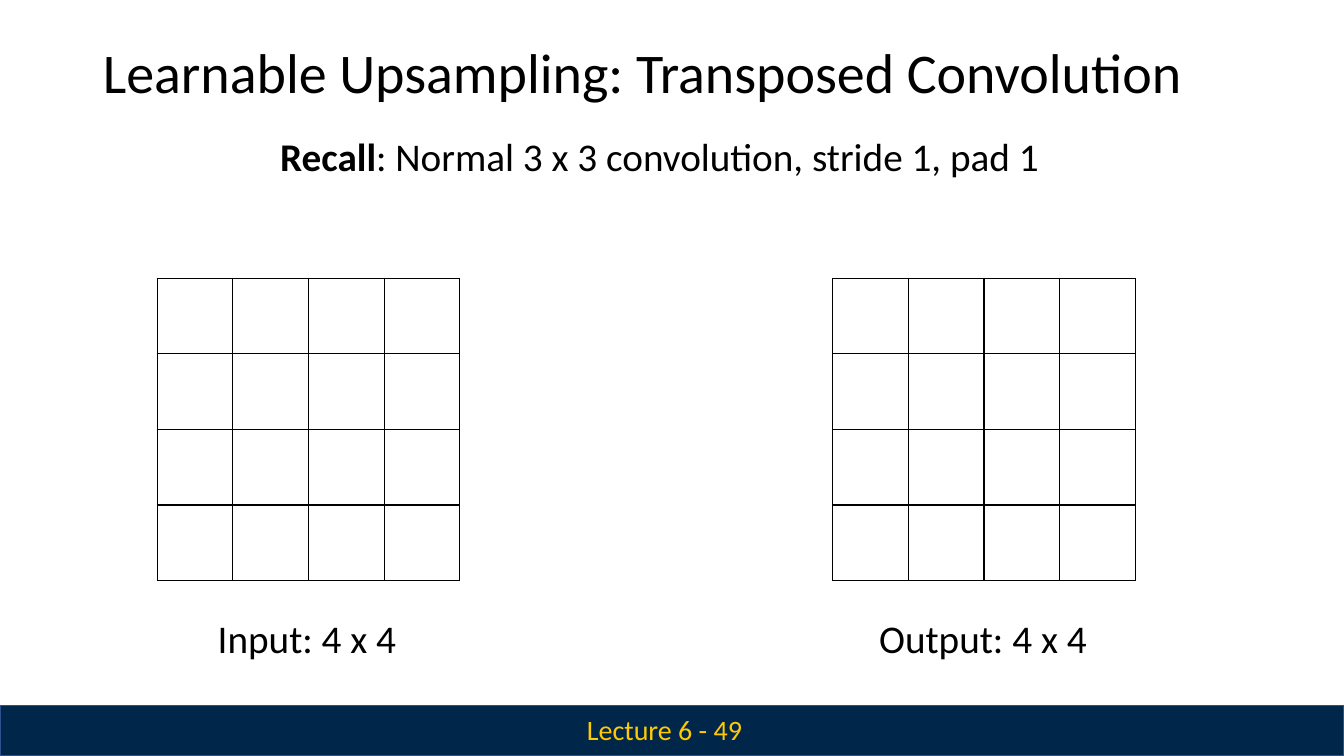
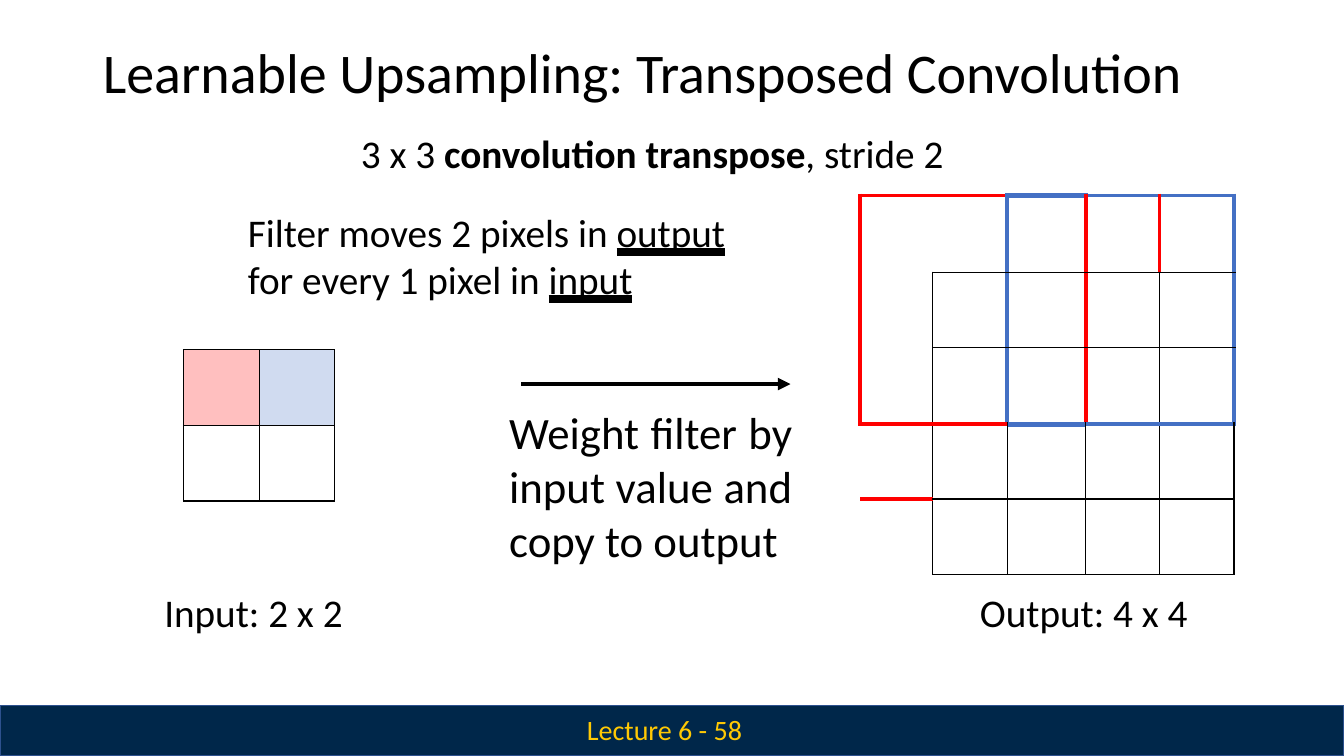
from lxml import etree
from pptx import Presentation
from pptx import util as u
from pptx.dml.color import RGBColor
from pptx.enum import shapes, text
from pptx.oxml import ns

HUES = {"ink": "000000", "navy": "00274A", "edge": "2D518E",
        "gold": "FFC904", "red": "FF0000", "blue": "4470C4"}
PLAIN = "{2D5ABB26-0587-4C30-8999-92F81FD0307C}"
TITLE = "Learnable Upsampling: Transposed Convolution"
CELL = 0.75


def hue(name):
    return RGBColor.from_string(HUES[name])


def child(node, tag, **attrs):
    return etree.SubElement(node, ns.qn("a:" + tag), attrs)


def write(frame, runs, size=28, color="ink", align=text.PP_ALIGN.LEFT):
    frame.word_wrap = True
    frame.auto_size = text.MSO_AUTO_SIZE.NONE
    frame.vertical_anchor = text.MSO_ANCHOR.TOP
    frame.margin_left = frame.margin_right = 0
    frame.margin_top = frame.margin_bottom = 0
    para = frame.paragraphs[0]
    para.alignment = align
    for words, style in runs:
        run = para.add_run()
        run.text = words
        font = run.font
        font.name = "Calibri"
        font.size = u.Pt(size)
        font.color.rgb = hue(color)
        font.bold = style == "bold"
        if style == "under":
            font.underline = text.MSO_UNDERLINE.HEAVY_LINE


def rim(top, left, rows, cols, color, width):
    edges = {}
    for col in range(left, left + cols):
        for row in (top, top + rows):
            edges["h", row, col] = (color, width)
    for row in range(top, top + rows):
        for col in (left, left + cols):
            edges["v", row, col] = (color, width)
    return edges


def mesh(top, left, rows, cols):
    edges = {}
    for row in range(top, top + rows):
        for col in range(left, left + cols):
            edges.update(rim(row, col, 1, 1, "ink", 1))
    return edges


class Deck:
    def __init__(self):
        self.prs = Presentation()
        self.prs.slide_width = u.Inches(13.33)
        self.prs.slide_height = u.Inches(7.5)

    def start(self, number):
        self.slide = self.prs.slides.add_slide(self.prs.slide_layouts[5])
        band = self.slide.shapes.add_shape(
            shapes.MSO_SHAPE.RECTANGLE, 0, u.Inches(7), u.Inches(13.33), u.Inches(0.5))
        band.shadow.inherit = False
        band.fill.solid()
        band.fill.fore_color.rgb = hue("navy")
        band.line.color.rgb = hue("edge")
        band.line.width = u.Pt(1)
        title = self.slide.shapes.title
        title.left, title.top = u.Inches(1.02), u.Inches(0.37)
        title.width, title.height = u.Inches(11.84), u.Inches(0.69)
        write(title.text_frame, [(TITLE, "")], size=40)
        self.label(5.82, 7.07, 1.75, (f"Lecture 6 - {number}", ""),
                   high=0.34, size=20, color="gold")

    def label(self, left, top, wide, *runs, high=0.49, **style):
        box = self.slide.shapes.add_textbox(
            u.Inches(left), u.Inches(top), u.Inches(wide), u.Inches(high))
        write(box.text_frame, runs, **style)

    def grid(self, left, top, cols, rows, edges, tints=None):
        table = self.slide.shapes.add_table(
            len(rows), len(cols), u.Inches(left), u.Inches(top),
            u.Inches(sum(cols)), u.Inches(sum(rows))).table
        table.first_row = table.horz_banding = False
        table._tbl.tblPr.find(ns.qn("a:tableStyleId")).text = PLAIN
        for col, wide in zip(table.columns, cols):
            col.width = u.Inches(wide)
        for row, high in zip(table.rows, rows):
            row.height = u.Inches(high)
        for row in range(len(rows)):
            for col in range(len(cols)):
                cell = table.cell(row, col)
                self.border(cell, row, col, edges)
                self.tint(cell, (tints or {}).get((row, col)))

    def border(self, cell, row, col, edges):
        props = cell._tc.get_or_add_tcPr()
        sides = {"lnL": ("v", row, col), "lnR": ("v", row, col + 1),
                 "lnT": ("h", row, col), "lnB": ("h", row + 1, col)}
        for tag, key in sides.items():
            if key in edges:
                color, width = edges[key]
                line = child(props, tag, w=str(u.Pt(width)))
                child(child(line, "solidFill"), "srgbClr", val=HUES[color])

    def tint(self, cell, color):
        if color is None:
            cell.fill.background()
            return
        cell.fill.solid()
        cell.fill.fore_color.rgb = hue(color)
        paint = cell._tc.tcPr.find(".//" + ns.qn("a:solidFill") + "[last()]")
        for paint in cell._tc.tcPr.findall(ns.qn("a:solidFill")):
            child(paint[0], "alpha", val="25000")

    def arrow(self, left, right, top):
        line = self.slide.shapes.add_connector(
            shapes.MSO_CONNECTOR.STRAIGHT, u.Inches(left), u.Inches(top),
            u.Inches(right), u.Inches(top))
        line.line.color.rgb = hue("ink")
        line.line.width = u.Pt(3)
        child(line.line._get_or_add_ln(), "tailEnd", type="triangle")
        child(line._element.spPr, "effectLst")


def recall(deck):
    deck.start(49)
    for left in (1.56, 8.26):
        deck.grid(left, 2.76, [CELL] * 4, [CELL] * 4, mesh(0, 0, 4, 4))
    deck.label(2.78, 1.31, 7.57, ("Recall", "bold"),
               (": Normal 3 x 3 convolution, stride 1, pad 1", ""))
    deck.label(2.16, 6.09, 1.9, ("Input: 4 x 4", ""))
    deck.label(8.72, 6.09, 2.2, ("Output: 4 x 4", ""))


def transpose(deck):
    deck.start(58)
    edges = {**mesh(1, 1, 4, 4),
             **rim(0, 0, 3, 3, "red", 3),
             **rim(0, 2, 3, 3, "blue", 3)}
    edges["h", 0, 2] = edges["h", 3, 2] = ("blue", 4.5)
    deck.grid(8.53, 1.94, [0.72, 0.74, 0.78, 0.73, 0.74],
              [0.76, 0.75, 0.76, 0.74, 0.75], edges)
    deck.grid(1.82, 3.47, [CELL] * 2, [CELL] * 2, mesh(0, 0, 2, 2),
              {(0, 0): "red", (0, 1): "blue"})
    deck.arrow(5.17, 7.84, 3.81)
    deck.label(3.58, 1.28, 5.9, ("3 x 3 ", ""),
               ("convolution transpose", "bold"), (", stride 2", ""))
    deck.label(2.46, 2.07, 4.9, ("Filter moves 2 pixels in ", ""),
               ("output", "under"), (" for every 1 pixel in ", ""),
               ("input", "under"), high=0.96)
    deck.label(5.05, 4.02, 2.81, ("Weight filter by input value and copy to output", ""),
               high=1.63, size=32, align=text.PP_ALIGN.JUSTIFY)
    deck.label(1.63, 5.84, 1.9, ("Input: 2 x 2", ""))
    deck.label(9.72, 5.84, 2.2, ("Output: 4 x 4", ""))


def main():
    deck = Deck()
    recall(deck)
    transpose(deck)
    deck.prs.save("out.pptx")


if __name__ == "__main__":
    main()
